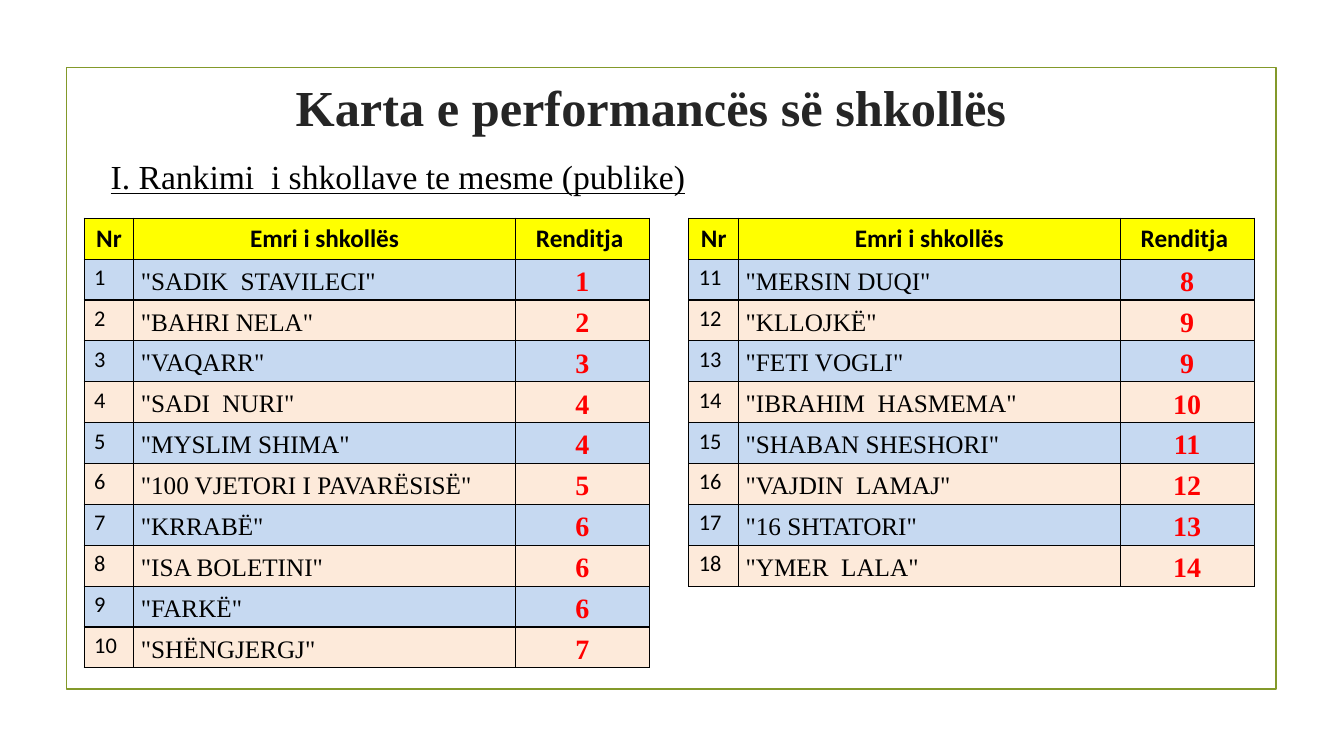
import pptx
import pptx.util
import pptx.dml.color
import pptx.enum.shapes
import pptx.enum.text
import pptx.oxml
import pptx.oxml.ns

Cm = pptx.util.Cm
Pt = pptx.util.Pt
RGBColor = pptx.dml.color.RGBColor
ALIGN = pptx.enum.text.PP_ALIGN
ANCHOR = pptx.enum.text.MSO_ANCHOR

BLACK = RGBColor(0x00, 0x00, 0x00)
CHARCOAL = RGBColor(0x25, 0x25, 0x25)
OLIVE = RGBColor(0x83, 0x99, 0x2A)
YELLOW = RGBColor(0xFF, 0xFF, 0x00)
BLUE = RGBColor(0xC6, 0xD9, 0xF1)
PEACH = RGBColor(0xFD, 0xEA, 0xDA)
RED = RGBColor(0xFF, 0x00, 0x00)
SERIF = "Times New Roman"
SANS = "Calibri"

HEADINGS = ("Nr ", "Emri i shkollës", "Renditja ")
SCHOOLS = [
    ("SADIK  STAVILECI", 1), ("BAHRI NELA", 2), ("VAQARR", 3),
    ("SADI  NURI", 4), ("MYSLIM SHIMA", 4), ("100 VJETORI I PAVARËSISË", 5),
    ("KRRABË", 6), ("ISA BOLETINI", 6), ("FARKË", 6), ("SHËNGJERGJ", 7),
    ("MERSIN DUQI", 8), ("KLLOJKË", 9), ("FETI VOGLI", 9),
    ("IBRAHIM  HASMEMA", 10), ("SHABAN SHESHORI", 11), ("VAJDIN  LAMAJ", 12),
    ("16 SHTATORI", 13), ("YMER  LALA", 14),
]
COLUMN_WIDTHS = (1.25, 9.62, 3.38)
ROW_HEIGHT = 1.03
TABLE_TOP = 5.5


def write(frame, text, size, face, color, bold=False, align=ALIGN.LEFT):
    para = frame.paragraphs[0]
    para.text = text
    para.alignment = align
    font = para.runs[0].font
    font.size = Pt(size)
    font.name = face
    font.color.rgb = color
    font.bold = bold
    return para


def add_borders(cell):
    properties = cell._tc.get_or_add_tcPr()
    for side in ("lnL", "lnR", "lnT", "lnB"):
        properties.append(pptx.oxml.parse_xml(
            f'<a:{side} {pptx.oxml.ns.nsdecls("a")} w="12700">'
            f'<a:solidFill><a:srgbClr val="{BLACK}"/></a:solidFill></a:{side}>'))


deck = pptx.Presentation()
deck.slide_width = Cm(33.87)
deck.slide_height = Cm(19.05)
page = deck.slides.add_slide(deck.slide_layouts[6])

border = page.shapes.add_shape(
    pptx.enum.shapes.MSO_SHAPE.RECTANGLE, Cm(1.68), Cm(1.7), Cm(30.48), Cm(15.66))
border.shadow.inherit = False
border.fill.background()
border.line.color.rgb = OLIVE
border.line.width = Pt(1.25)

title = page.shapes.add_textbox(Cm(3.81), Cm(1.91), Cm(25.2), Cm(1.55)).text_frame
title.word_wrap = True
title.vertical_anchor = ANCHOR.MIDDLE
title.margin_left = title.margin_right = title.margin_top = title.margin_bottom = 0
write(title, "Karta e performancës së shkollës", 36, SERIF, CHARCOAL, True, ALIGN.CENTER)

subtitle = page.shapes.add_textbox(Cm(2.54), Cm(3.81), Cm(15.11), Cm(1.27)).text_frame
subtitle.word_wrap = False
heading = write(subtitle, "I. Rankimi  i shkollave te mesme (publike)", 24, SERIF, BLACK)
heading.runs[0].font.underline = True

for left, first, last in ((2.12, 1, 10), (17.36, 11, 18)):
    row_count = last - first + 2
    table = page.shapes.add_table(
        row_count, len(HEADINGS), Cm(left), Cm(TABLE_TOP),
        Cm(sum(COLUMN_WIDTHS)), Cm(ROW_HEIGHT * row_count)).table
    for column, width in zip(table.columns, COLUMN_WIDTHS):
        column.width = Cm(width)
    for row in table.rows:
        row.height = Cm(ROW_HEIGHT)

    for column, label in enumerate(HEADINGS):
        write(table.cell(0, column).text_frame, label, 18, SANS, BLACK, True, ALIGN.CENTER)

    for row, number in enumerate(range(first, last + 1), start=1):
        school, rank = SCHOOLS[number - 1]
        number_cell, name_cell, rank_cell = table.rows[row].cells
        write(number_cell.text_frame, str(number), 16, SANS, BLACK)
        name = write(name_cell.text_frame, f'"{school}"', 18, SERIF, BLACK)
        place = write(rank_cell.text_frame, str(rank), 20, SERIF, RED, True, ALIGN.CENTER)
        name.line_spacing = place.line_spacing = 1.15
        for cell in (name_cell, rank_cell):
            cell.vertical_anchor = ANCHOR.MIDDLE
            cell.margin_left = cell.margin_right = Cm(0.18)
            cell.margin_top = cell.margin_bottom = 0

    for row_index, row in enumerate(table.rows):
        for cell in row.cells:
            add_borders(cell)
            cell.fill.solid()
            if row_index == 0:
                cell.fill.fore_color.rgb = YELLOW
            else:
                cell.fill.fore_color.rgb = BLUE if row_index % 2 else PEACH

deck.save("out.pptx")
